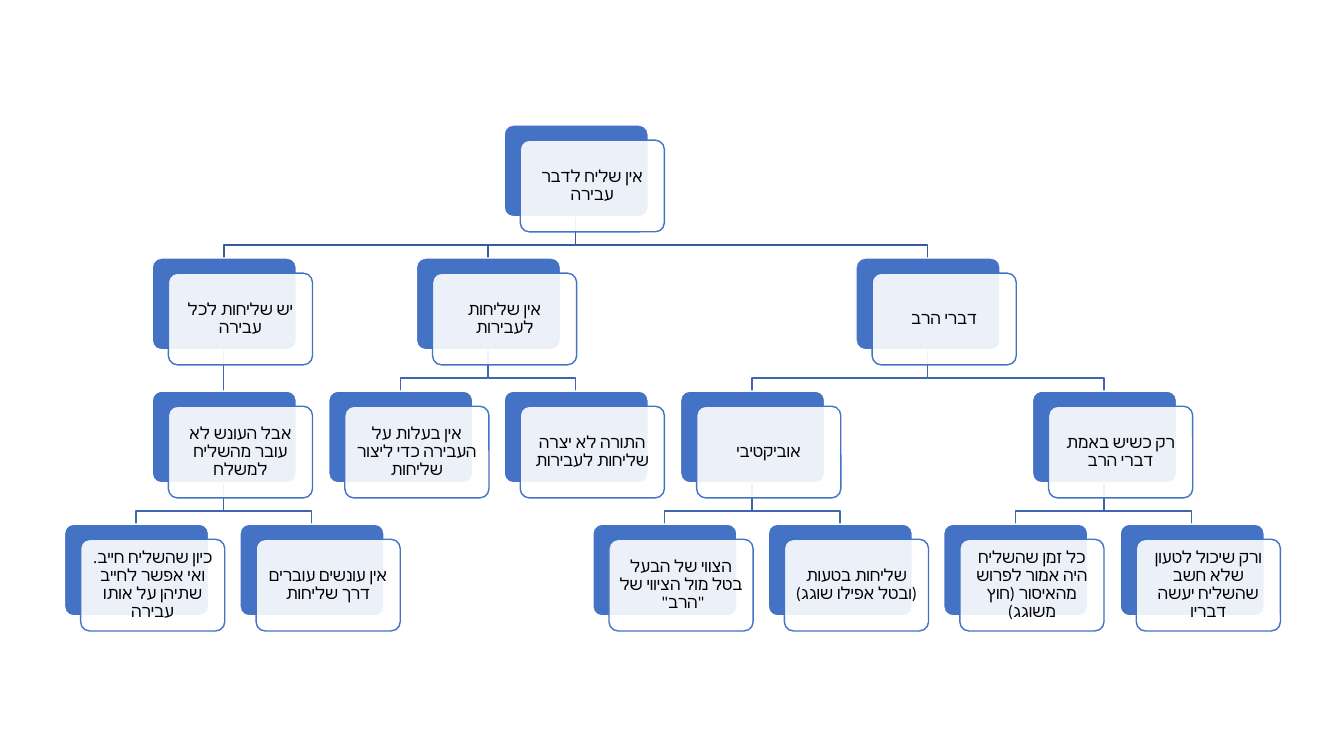
from dataclasses import dataclass
from typing import Iterator

from lxml.etree import SubElement
from pptx import Presentation
from pptx.dml.color import RGBColor
from pptx.enum.shapes import MSO_SHAPE
from pptx.enum.text import MSO_ANCHOR, PP_ALIGN
from pptx.oxml.ns import qn
from pptx.shapes.autoshape import Shape
from pptx.shapes.shapetree import SlideShapes
from pptx.util import Emu, Pt

PX = 9144
LEFT, TOP = 64, 124
SLOT_STEP, LEVEL_STEP = 87.25, 132
BOX_W, BOX_H = 143, 91
CARD_DX, CARD_DY = 16, 15
ELBOW_DROP = 28
INSET = 5
FONT = "Calibri"

BLUE = RGBColor(0x44, 0x72, 0xC4)
ROOT_LINE = RGBColor(0x36, 0x5B, 0x9D)
BRANCH_LINE = RGBColor(0x3E, 0x67, 0xB2)
WHITE = RGBColor(0xFF, 0xFF, 0xFF)
BLACK = RGBColor(0x00, 0x00, 0x00)


@dataclass(frozen=True)
class Node:
    text: str
    slot: int
    children: tuple["Node", ...] = ()


TREE = Node("אין שליח לדבר עבירה", 5, (
    Node("דברי הרב", 9, (
        Node("רק כשיש באמת דברי הרב", 11, (
            Node("ורק שיכול לטעון שלא חשב שהשליח יעשה דבריו", 12),
            Node("כל זמן שהשליח היה אמור לפרוש מהאיסור (חוץ משוגג)", 10),
        )),
        Node("אוביקטיבי", 7, (
            Node("שליחות בטעות (ובטל אפילו שוגג)", 8),
            Node('הצווי של הבעל בטל מול הציווי של "הרב" ', 6),
        )),
    )),
    Node("אין שליחות לעבירות", 4, (
        Node("התורה לא יצרה שליחות לעבירות", 5),
        Node("אין בעלות על העבירה כדי ליצור שליחות", 3),
    )),
    Node("יש שליחות לכל עבירה", 1, (
        Node("אבל העונש לא עובר מהשליח למשלח", 1, (
            Node("אין עונשים עוברים דרך שליחות", 2),
            Node("כיון שהשליח חייב. ואי אפשר לחייב שתיהן על אותו עבירה", 0),
        )),
    )),
))


def px(n: int) -> Emu:
    return Emu(n * PX)


def node_left(node: Node) -> int:
    return LEFT + round(node.slot * SLOT_STEP)


def node_top(level: int) -> int:
    return TOP + level * LEVEL_STEP


def walk(node: Node, level: int = 0) -> Iterator[tuple[Node, int]]:
    yield node, level
    for child in node.children:
        yield from walk(child, level + 1)


def draw_branch(shapes: SlideShapes, parent: Node, child: Node, level: int) -> None:
    x1, x2 = (node_left(n) + BOX_W // 2 for n in (parent, child))
    y1, y2 = node_top(level) + BOX_H, node_top(level + 1)
    bend = y1 + ELBOW_DROP
    points = [(x1, bend), (x2, bend), (x2, y2)] if x1 != x2 else [(x2, y2)]
    fb = shapes.build_freeform(x1, y1, scale=PX)
    fb.add_line_segments(points, close=False)
    sp = fb.convert_to_shape()
    sp.shadow.inherit = False
    sp.fill.background()
    sp.line.color.rgb = ROOT_LINE if level == 0 else BRANCH_LINE
    sp.line.width = Pt(1)


def draw_box(shapes: SlideShapes, x: int, y: int, fill: RGBColor, line: RGBColor) -> Shape:
    sp = shapes.add_shape(MSO_SHAPE.ROUNDED_RECTANGLE, px(x), px(y), px(BOX_W), px(BOX_H))
    sp.adjustments[0] = 0.1
    sp.shadow.inherit = False
    sp.fill.solid()
    sp.fill.fore_color.rgb = fill
    sp.line.color.rgb = line
    sp.line.width = Pt(1)
    return sp


def write_text(sp: Shape, text: str) -> None:
    tf = sp.text_frame
    tf.text = text
    tf.word_wrap = True
    tf.vertical_anchor = MSO_ANCHOR.MIDDLE
    tf.margin_left = tf.margin_right = tf.margin_top = tf.margin_bottom = px(INSET)
    p = tf.paragraphs[0]
    p.alignment = PP_ALIGN.CENTER
    p.line_spacing = 0.9
    p._p.get_or_add_pPr().set("rtl", "1")
    r = p.runs[0]
    r.font.size = Pt(12)
    r.font.color.rgb = BLACK
    r.font.name = FONT
    SubElement(r._r.get_or_add_rPr(), qn("a:cs"), typeface=FONT)


def draw_node(shapes: SlideShapes, node: Node, level: int) -> None:
    x, y = node_left(node), node_top(level)
    draw_box(shapes, x, y, BLUE, WHITE)
    card = draw_box(shapes, x + CARD_DX, y + CARD_DY, WHITE, BLUE)
    color = card.fill._xPr.find(qn("a:solidFill"))[0]
    SubElement(color, qn("a:alpha"), val="90000")
    write_text(card, node.text)


def main() -> None:
    prs = Presentation()
    prs.slide_width, prs.slide_height = px(1333), px(750)
    s = prs.slides.add_slide(prs.slide_layouts[6])
    for node, level in walk(TREE):
        for child in node.children:
            draw_branch(s.shapes, node, child, level)
    for node, level in walk(TREE):
        draw_node(s.shapes, node, level)
    prs.save("out.pptx")


if __name__ == "__main__":
    main()
